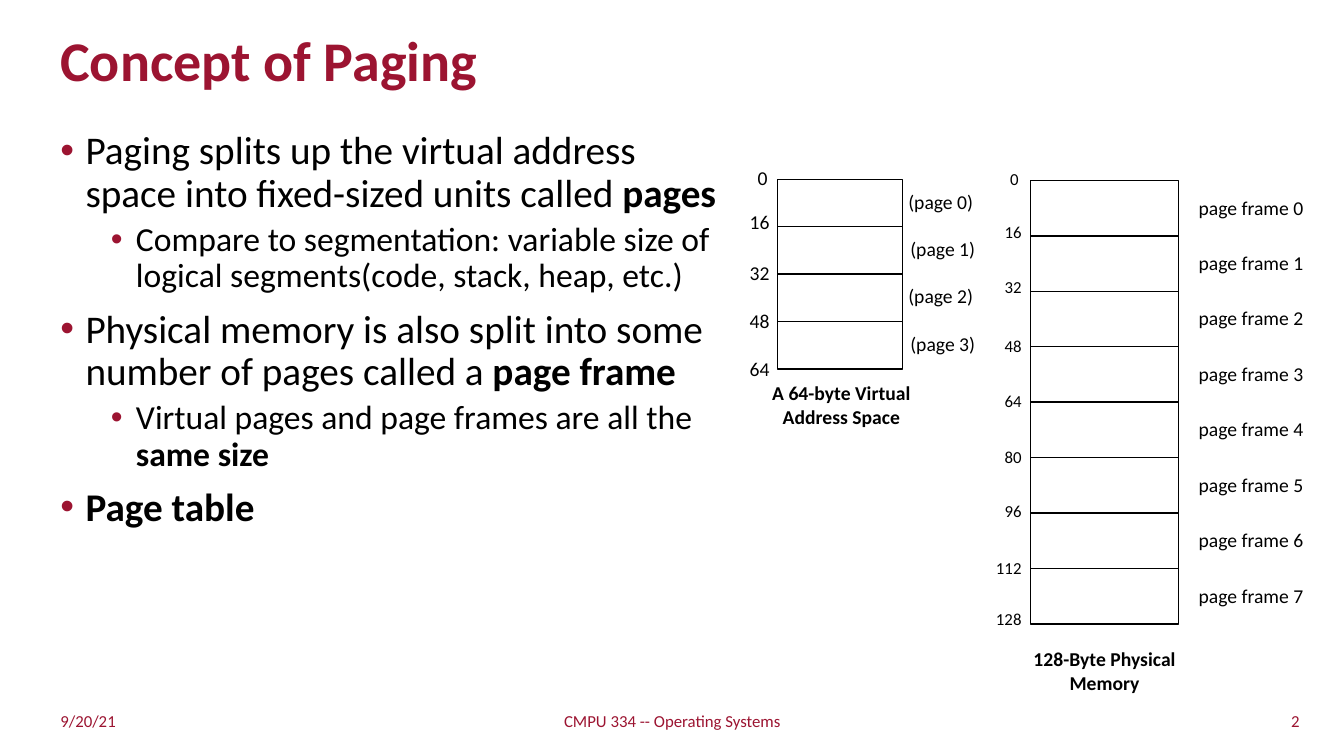
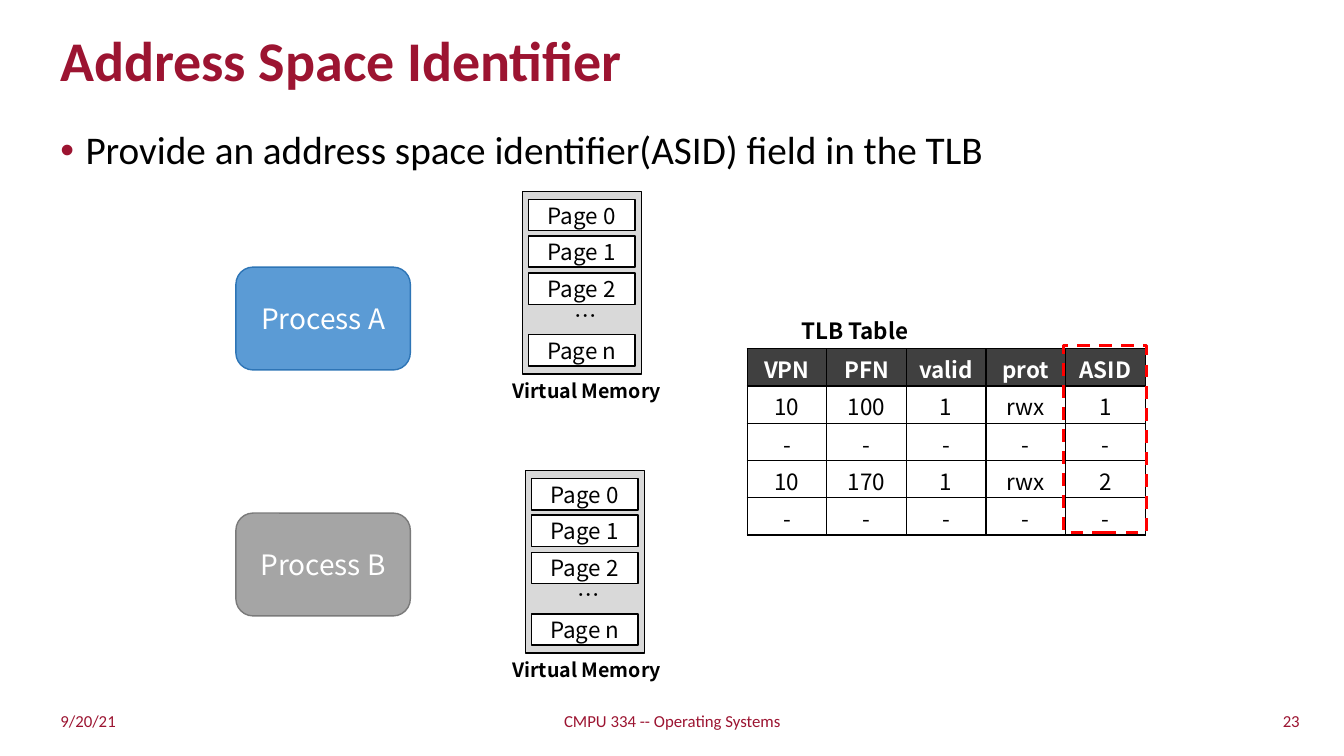
from lxml.etree import SubElement
from pptx import Presentation
from pptx.dml.color import RGBColor
from pptx.enum.dml import MSO_LINE
from pptx.enum.shapes import MSO_SHAPE
from pptx.enum.text import MSO_ANCHOR, PP_ALIGN
from pptx.oxml import parse_xml
from pptx.oxml.ns import nsdecls, qn
from pptx.util import Inches, Pt


class Theme:
    wine, black, white = "9C1431", "000000", "FFFFFF"
    blue, navy, gray, slate = "5B9BD5", "2E75B6", "A5A5A5", "7A7A7A"
    pale, dark, red = "D9D9D9", "404040", "FF0000"
    sans, noto = "Calibri", "Noto Sans CJK KR"
    title, body, sub, name, cell, label, small = 40, 28, 24, 20, 16, 14, 12


LEFT, MID, RIGHT = PP_ALIGN.LEFT, PP_ALIGN.CENTER, PP_ALIGN.RIGHT
TOP, CORE = MSO_ANCHOR.TOP, MSO_ANCHOR.MIDDLE


def write(frame, lines, size, font=Theme.sans, tint=Theme.black, bold=False, align=LEFT):
    """Fill a text frame; text between ** marks is bold."""
    for i, line in enumerate(lines):
        para = frame.paragraphs[0] if i == 0 else frame.add_paragraph()
        para.alignment = align
        for j, part in enumerate(line.split("**")):
            if not part:
                continue
            run = para.add_run()
            run.text = part
            look = {"name": font, "size": Pt(size), "bold": bold or j % 2 == 1}
            for key, value in look.items():
                setattr(run.font, key, value)
            run.font.color.rgb = RGBColor.from_string(tint)
            SubElement(run.font._element, qn("a:ea")).set("typeface", font)


def box(page, spot, lines=(), size=Theme.label, kind=None, fill=None, edge=None,
        width=1, anchor=TOP, side=0.1, **look):
    """Add a text box, or a preset shape when a kind is given."""
    area = [Inches(n) for n in spot]
    if kind is None:
        item = page.shapes.add_textbox(*area)
    else:
        item = page.shapes.add_shape(kind, *area)
        item.shadow.inherit = False
        if fill:
            item.fill.solid()
            item.fill.fore_color.rgb = RGBColor.from_string(fill)
        else:
            item.fill.background()
        if edge:
            item.line.color.rgb = RGBColor.from_string(edge)
            item.line.width = Pt(width)
        else:
            item.line.fill.background()
    form = {"word_wrap": True, "vertical_anchor": anchor,
            "margin_left": Inches(side), "margin_right": Inches(side)}
    for key, value in form.items():
        setattr(item.text_frame, key, value)
    write(item.text_frame, lines, size, **look)
    return item


RECT, ROUND = MSO_SHAPE.RECTANGLE, MSO_SHAPE.ROUNDED_RECTANGLE
deck = Presentation()
deck.slide_width, deck.slide_height = Inches(13.33), Inches(7.5)

# Shared parts: title, bullets, footer
plan = [
    ("Concept of Paging", "2", 6.81, [
        (0, "Paging splits up the virtual address space into fixed-sized units called **pages**"),
        (1, "Compare to segmentation: variable size of logical segments(code, stack, heap, etc.)"),
        (0, "Physical memory is also split into some number of pages called a **page frame**"),
        (1, "Virtual pages and page frames are all the **same size**"),
        (0, "**Page table**")]),
    ("Address Space Identifier", "23", 12.33, [
        (0, "Provide an address space identifier(ASID) field in the TLB")]),
]
pages = []
for title, num, wide, points in plan:
    page = deck.slides.add_slide(deck.slide_layouts[6])
    pages.append(page)
    head = box(page, (0.5, 0.25, 11.45, 0.75), [title], Theme.title,
               anchor=CORE, tint=Theme.wine, bold=True)
    head.text_frame.paragraphs[0].line_spacing = 0.9

    body = box(page, (0.5, 1.25, wide, 5.45), [text for _, text in points], Theme.body)
    for i, (para, (level, _)) in enumerate(zip(body.text_frame.paragraphs, points)):
        prop = para._p.get_or_add_pPr()
        prop.set("marL", str(Inches(0.25 + 0.5 * level)))
        prop.set("indent", str(-Inches(0.25)))
        tone = SubElement(prop, qn("a:buClr"))
        SubElement(tone, qn("a:srgbClr")).set("val", Theme.wine)
        SubElement(prop, qn("a:buFont")).set("typeface", "Arial")
        SubElement(prop, qn("a:buChar")).set("char", "•")
        para.line_spacing = 0.9
        if i:
            para.space_before = Pt(5 if level else 10)
        for run in para.runs:
            run.font.size = Pt(Theme.sub if level else Theme.body)

    for left, wide, text, align in [(0.5, 3.76, "9/20/21", LEFT),
                                    (4.42, 4.5, "CMPU 334 -- Operating Systems", MID),
                                    (9.23, 3.76, num, RIGHT)]:
        box(page, (left, 6.95, wide, 0.4), [text], Theme.small,
            anchor=CORE, tint=Theme.wine, align=align)

first, second = pages

# Virtual address space
for i, top in enumerate([1.6, 2.03, 2.54, 3.02, 3.49]):
    box(first, (7.3 if i else 7.33, top, 0.47, 0.35), [str(16 * i)], align=MID)
for i in range(4):
    box(first, (7.71, 1.78 + 0.47 * i, 1.24, 0.47), kind=RECT,
        fill=Theme.white, edge=Theme.black)
    box(first, (8.93 if i % 2 else 8.91, 1.83 + 0.47 * i, 0.95, 0.35), [f"(page {i})"])
box(first, (7.34, 3.73, 2.01, 0.56), ["A 64-byte Virtual", "Address Space"],
    bold=True, align=MID)

# Physical memory
for i, top in enumerate([1.62, 2.15, 2.7, 3.28, 3.83, 4.38, 4.92, 5.48, 5.99]):
    box(first, (9.55, top, 0.68 if i else 0.65, 0.3), [str(16 * i)],
        Theme.small, align=RIGHT)
for i in range(8):
    box(first, (10.22, 1.79 + 0.55 * i, 1.47, 0.55), kind=RECT, edge=Theme.black)
    box(first, (11.79, 1.89 + 0.55 * i, 1.53, 0.35), [f"page frame {i}"])
box(first, (9.91, 6.37, 2.09, 0.57), ["128-Byte Physical", "Memory"],
    bold=True, align=MID)

# Processes and their virtual memory
for name, top, fill, edge, left, roof in [
        ("Process A", 2.65, Theme.blue, Theme.navy, 5.18, 1.9),
        ("Process B", 5.09, Theme.gray, Theme.slate, 5.21, 4.67)]:
    box(second, (2.34, top, 1.73, 1.02), [name], Theme.name, ROUND, fill, edge,
        anchor=CORE, font=Theme.noto, tint=Theme.white, align=MID)
    box(second, (left, roof, 1.18, 1.81), kind=RECT, fill=Theme.pale, edge=Theme.black)
    for mark, drop in [("0", 0.08), ("1", 0.44), ("2", 0.81), ("n", 1.42)]:
        box(second, (left + 0.06, roof + drop, 1.06, 0.31), [f"Page {mark}"],
            Theme.cell, RECT, Theme.white, Theme.black,
            anchor=CORE, side=0, font=Theme.noto, align=MID)
    box(second, (left + 0.42, roof + 1.05, 1.16, 0.37), ["…"], Theme.cell, font=Theme.noto)
    box(second, (4.86, roof + 1.81, 1.92, 0.34), ["Virtual Memory"],
        font=Theme.noto, bold=True, align=MID)

# TLB table
box(second, (7.85, 3.1, 1.54, 0.37), ["TLB Table"], Theme.cell, RECT, Theme.white,
    font=Theme.noto, bold=True)
data = ["VPN PFN valid prot ASID", "10 100 1 rwx 1", "- - - - -",
        "10 170 1 rwx 2", "- - - - -"]
grid = second.shapes.add_table(5, 5, Inches(7.41), Inches(3.46),
                               Inches(3.94), Inches(1.85)).table
grid.first_row = grid.horz_banding = False
for col in grid.columns:
    col.width = Inches(0.79)
for r, line in enumerate(data):
    grid.rows[r].height = Inches(0.37)
    for c, text in enumerate(line.split()):
        cell = grid.cell(r, c)
        form = {"margin_left": 0, "margin_right": 0,
                "margin_top": Inches(0.04), "margin_bottom": 0}
        for key, value in form.items():
            setattr(cell, key, value)
        write(cell.text_frame, [text], Theme.cell, Theme.noto,
              Theme.black if r else Theme.white, r == 0, MID)
        prop = cell._tc.get_or_add_tcPr()
        for side in "LRTB":
            prop.append(parse_xml(
                f'<a:ln{side} {nsdecls("a")} w="{Pt(1)}"><a:solidFill>'
                f'<a:srgbClr val="{Theme.black}"/></a:solidFill></a:ln{side}>'))
        if r:
            cell.fill.background()
        else:
            cell.fill.solid()
            cell.fill.fore_color.rgb = RGBColor.from_string(Theme.dark)

# Frame around the ASID column
ring = box(second, (10.55, 3.43, 0.82, 1.85), kind=RECT, edge=Theme.red, width=2.25)
ring.line.dash_style = MSO_LINE.DASH

deck.save("out.pptx")
